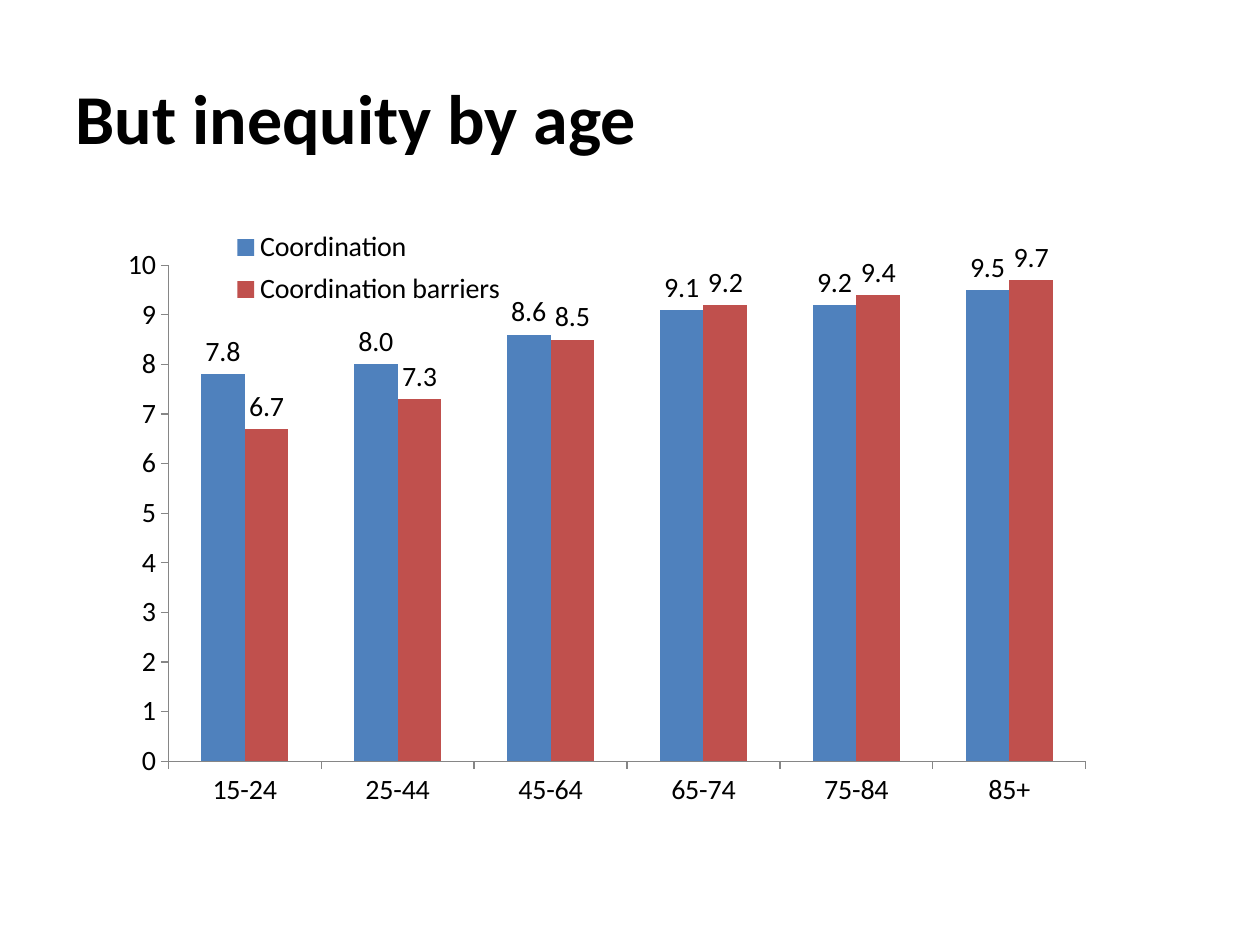
import pptx
import pptx.chart.data
import pptx.dml.color
import pptx.enum.chart
import pptx.enum.text
import pptx.oxml
import pptx.oxml.ns
import pptx.util

Inches = pptx.util.Inches
Pt = pptx.util.Pt
RGBColor = pptx.dml.color.RGBColor

BLACK = RGBColor(0x00, 0x00, 0x00)
GRAY = RGBColor(0x86, 0x86, 0x86)
BLUE = RGBColor(0x4F, 0x81, 0xBD)
RED = RGBColor(0xC0, 0x50, 0x4D)

AGES = ["15-24", "25-44", "45-64", "65-74", "75-84", "85+"]
SERIES = [
    ("Coordination", [7.8, 8.0, 8.6, 9.1, 9.2, 9.5], BLUE),
    ("Coordination barriers", [6.7, 7.3, 8.5, 9.2, 9.4, 9.7], RED),
]


def set_layout(parent, index, x, y, w, h, inner=False):
    """Place a chart part by fractions of the chart's size."""
    for old in parent.findall(pptx.oxml.ns.qn("c:layout")):
        parent.remove(old)
    target = '<c:layoutTarget val="inner"/>' if inner else ""
    parent.insert(index, pptx.oxml.parse_xml(
        f'<c:layout {pptx.oxml.ns.nsdecls("c")}><c:manualLayout>{target}'
        '<c:xMode val="edge"/><c:yMode val="edge"/>'
        f'<c:x val="{x}"/><c:y val="{y}"/><c:w val="{w}"/><c:h val="{h}"/>'
        '</c:manualLayout></c:layout>'))


prs = pptx.Presentation()
prs.slide_width = Inches(10)
prs.slide_height = Inches(7.5)
s = prs.slides.add_slide(prs.slide_layouts[5])

# Title
title = s.shapes.title
title.left, title.top = Inches(0.5), Inches(0.3)
title.width, title.height = Inches(9), Inches(1.25)
tf = title.text_frame
tf.text = "But inequity by age"
tf.vertical_anchor = pptx.enum.text.MSO_ANCHOR.MIDDLE
p = tf.paragraphs[0]
p.alignment = pptx.enum.text.PP_ALIGN.LEFT
p.font.name = "Calibri"
p.font.size = Pt(40)
p.font.bold = True
p.font.color.rgb = BLACK

# Chart
data = pptx.chart.data.CategoryChartData()
data.categories = AGES
for name, values, color in SERIES:
    data.add_series(name, values)
chart = s.shapes.add_chart(
    pptx.enum.chart.XL_CHART_TYPE.COLUMN_CLUSTERED,
    Inches(0.75), Inches(1.62), Inches(8.37), Inches(4.86), data).chart
chart.has_title = False
chart.font.name = "Calibri"
chart.font.size = Pt(16)
chart.font.color.rgb = BLACK

plot = chart.plots[0]
plot.vary_by_categories = False
plot.gap_width = 150
plot.overlap = 0
for series, (name, values, color) in zip(plot.series, SERIES):
    series.format.fill.solid()
    series.format.fill.fore_color.rgb = color
    labels = series.data_labels
    labels.show_value = True
    labels.number_format = "0.0"
    labels.number_format_is_linked = False
    labels.position = pptx.enum.chart.XL_LABEL_POSITION.OUTSIDE_END

# Axes
for axis in (chart.category_axis, chart.value_axis):
    axis.has_major_gridlines = False
    axis.major_tick_mark = pptx.enum.chart.XL_TICK_MARK.OUTSIDE
    axis.minor_tick_mark = pptx.enum.chart.XL_TICK_MARK.NONE
    axis.format.line.color.rgb = GRAY
    axis.format.line.width = Pt(0.75)
value_axis = chart.value_axis
value_axis.minimum_scale = 0
value_axis.maximum_scale = 10
value_axis.major_unit = 1
value_axis.tick_labels.number_format = "0"
value_axis.tick_labels.number_format_is_linked = False

# Legend over the plot's upper left corner
chart.has_legend = True
chart.legend.position = pptx.enum.chart.XL_LEGEND_POSITION.RIGHT
chart.legend.include_in_layout = False
plot_area = chart.element.find(".//" + pptx.oxml.ns.qn("c:plotArea"))
legend = chart.element.find(".//" + pptx.oxml.ns.qn("c:legend"))
set_layout(plot_area, 0, 0.07, 0.1, 0.87, 0.81, inner=True)
set_layout(legend, 1, 0.11, 0.03, 0.3, 0.15)

prs.save("out.pptx")
